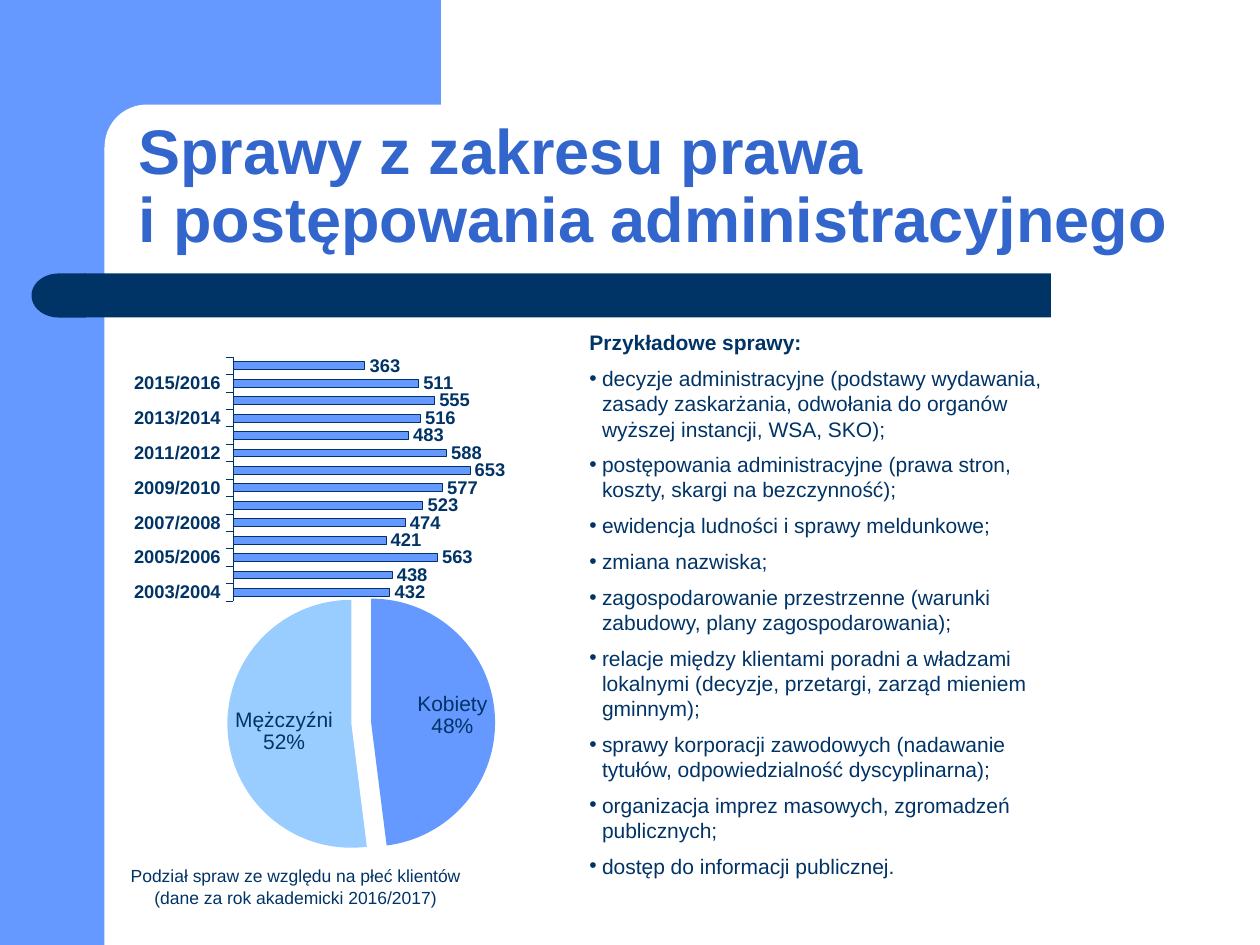
from dataclasses import dataclass

from lxml.etree import SubElement
from pptx import Presentation
from pptx.chart.data import CategoryChartData
from pptx.dml.color import RGBColor
from pptx.enum.chart import XL_CHART_TYPE, XL_LABEL_POSITION, XL_TICK_MARK
from pptx.enum.shapes import MSO_SHAPE
from pptx.enum.text import MSO_ANCHOR, MSO_AUTO_SIZE, PP_ALIGN
from pptx.oxml import parse_xml
from pptx.oxml.ns import nsdecls, qn
from pptx.util import Inches, Pt


@dataclass(frozen=True)
class Theme:
    font: str = "Arial"
    white: RGBColor = RGBColor.from_string("FFFFFF")
    blue: RGBColor = RGBColor.from_string("6699FF")
    light: RGBColor = RGBColor.from_string("99CCFF")
    navy: RGBColor = RGBColor.from_string("003366")
    heading: RGBColor = RGBColor.from_string("3366CC")
    title_size: Pt = Pt(36)
    body_size: Pt = Pt(12)
    bar_size: Pt = Pt(10.5)
    caption_size: Pt = Pt(10)


theme = Theme()


def write_text(para, text, size=theme.body_size, color=theme.navy, bold=False,
               align=PP_ALIGN.LEFT, before=0, line=None, bullet=False):
    para.text = text
    para.alignment = align
    para.space_before = Pt(before)
    para.line_spacing = line
    for span in para.runs:
        span.font.name = theme.font
        span.font.size = size
        span.font.bold = bold
        span.font.color.rgb = color
    if bullet:
        properties = para._p.get_or_add_pPr()
        properties.set("marL", str(Inches(0.1)))
        properties.set("indent", str(-Inches(0.1)))
        SubElement(properties, qn("a:buFont")).set("typeface", theme.font)
        SubElement(properties, qn("a:buChar")).set("char", "•")


def place_plot(chart, **fractions):
    plot_area = chart._chartSpace.chart.plotArea
    for old_layout in plot_area.findall(qn("c:layout")):
        plot_area.remove(old_layout)
    values = "".join(f'<c:{key} val="{value}"/>' for key, value in fractions.items())
    plot_area.insert(0, parse_xml(
        f'<c:layout {nsdecls("c")}><c:manualLayout><c:layoutTarget val="inner"/>'
        f'<c:xMode val="edge"/><c:yMode val="edge"/>{values}</c:manualLayout></c:layout>'))


deck = Presentation()
deck.slide_width = Inches(10)
deck.slide_height = Inches(7.5)
page = deck.slides.add_slide(deck.slide_layouts[5])

decorations = [
    (MSO_SHAPE.RECTANGLE, 0, 0, 0.83, 7.5, theme.blue, 0),
    (MSO_SHAPE.RECTANGLE, 0.75, 0, 2.75, 1.17, theme.blue, 0),
    (MSO_SHAPE.ROUNDED_RECTANGLE, 0.83, 0.83, 5.58, 0.67, theme.white, 0),
    (MSO_SHAPE.RECTANGLE, 0.67, 2.17, 7.67, 0.35, theme.navy, 0),
    (MSO_SHAPE.FLOWCHART_DELAY, 0.25, 2.17, 0.43, 0.35, theme.navy, 180),
]
for kind, left, top, width, height, color, rotation in decorations:
    shape = page.shapes.add_shape(kind, Inches(left), Inches(top), Inches(width), Inches(height))
    shape.shadow.inherit = False
    shape.fill.solid()
    shape.fill.fore_color.rgb = color
    shape.line.fill.background()
    shape.rotation = rotation
    if kind == MSO_SHAPE.ROUNDED_RECTANGLE:
        shape.adjustments[0] = 0.5

title = page.shapes.title
page.shapes._spTree.append(title._element)
title.left, title.top, title.width, title.height = map(Inches, (1, 0.83, 8.75, 1.25))
title.text_frame.vertical_anchor = MSO_ANCHOR.BOTTOM
title.text_frame.auto_size = MSO_AUTO_SIZE.NONE
title.text_frame.word_wrap = True
write_text(title.text_frame.paragraphs[0],
           "Sprawy z zakresu prawa \ni postępowania administracyjnego",
           size=theme.title_size, color=theme.heading, bold=True, line=0.9)

cases = [
    "decyzje administracyjne (podstawy wydawania, zasady zaskarżania, odwołania do organów wyższej instancji, WSA, SKO);",
    "postępowania administracyjne (prawa stron, koszty, skargi na bezczynność);",
    "ewidencja ludności i sprawy meldunkowe;",
    "zmiana nazwiska;",
    "zagospodarowanie przestrzenne (warunki zabudowy, plany zagospodarowania);",
    "relacje między klientami poradni a władzami lokalnymi (decyzje, przetargi, zarząd mieniem gminnym);",
    "sprawy korporacji zawodowych (nadawanie tytułów, odpowiedzialność dyscyplinarna);",
    "organizacja imprez masowych, zgromadzeń publicznych;",
    "dostęp do informacji publicznej.",
]
cases_box = page.shapes.add_textbox(Inches(4.58), Inches(2.57), Inches(4.04), Inches(4.64))
cases_box.text_frame.word_wrap = True
cases_box.text_frame.auto_size = MSO_AUTO_SIZE.SHAPE_TO_FIT_TEXT
write_text(cases_box.text_frame.paragraphs[0], "Przykładowe sprawy:", bold=True, before=6)
for case in cases:
    write_text(cases_box.text_frame.add_paragraph(), case, before=6, bullet=True)

counts = [432, 438, 563, 421, 474, 523, 577, 653, 588, 483, 516, 555, 511, 363]
year_data = CategoryChartData()
year_data.categories = [f"{year}/{year + 1}" for year in range(2003, 2017)]
year_data.add_series("Sprawy", counts)
year_chart = page.shapes.add_chart(XL_CHART_TYPE.BAR_CLUSTERED, Inches(0.88), Inches(2.65),
                                   Inches(3.47), Inches(2.28), year_data).chart
place_plot(year_chart, x=0.28, y=0.08, w=0.58, h=0.85)
year_chart.value_axis.visible = False
year_chart.value_axis.has_major_gridlines = False
year_chart.value_axis.minimum_scale = 0
year_chart.value_axis.maximum_scale = 700
year_axis = year_chart.category_axis
year_axis.major_tick_mark = XL_TICK_MARK.OUTSIDE
year_axis.format.line.color.rgb = theme.navy
year_axis.format.line.width = Pt(0.15)
year_axis._element.find(qn("c:noMultiLvlLbl")).addprevious(
    parse_xml(f'<c:tickLblSkip {nsdecls("c")} val="1"/>'))
bar_plot = year_chart.plots[0]
bar_plot.gap_width = 120
bar_plot.vary_by_categories = False
bars = bar_plot.series[0]
bars.format.fill.solid()
bars.format.fill.fore_color.rgb = theme.blue
bars.format.line.color.rgb = theme.navy
bars.format.line.width = Pt(0.25)
bar_labels = bars.data_labels
bar_labels.show_value = True
bar_labels.position = XL_LABEL_POSITION.OUTSIDE_END

caption_box = page.shapes.add_textbox(Inches(0.83), Inches(6.82), Inches(3.03), Inches(0.43))
caption_box.text_frame.word_wrap = True
caption_box.text_frame.auto_size = MSO_AUTO_SIZE.SHAPE_TO_FIT_TEXT
write_text(caption_box.text_frame.paragraphs[0],
           "Podział spraw ze względu na płeć klientów (dane za rok akademicki 2016/2017)",
           size=theme.caption_size, align=PP_ALIGN.CENTER, before=5)

gender_data = CategoryChartData()
gender_data.categories = ["Kobiety", "Mężczyźni"]
gender_data.add_series("Płeć", [48, 52])
gender_chart = page.shapes.add_chart(XL_CHART_TYPE.PIE, Inches(0.27), Inches(4.54),
                                     Inches(4.33), Inches(2.4), gender_data).chart
place_plot(gender_chart, x=0.37, y=0.09, w=0.46, h=0.82)
slices = gender_chart.plots[0].series[0]
for index, color in enumerate((theme.blue, theme.light)):
    fill = slices.points[index].format.fill
    fill.solid()
    fill.fore_color.rgb = color
for point in slices._element.findall(qn("c:dPt")):
    point.find(qn("c:spPr")).addprevious(parse_xml(f'<c:explosion {nsdecls("c")} val="8"/>'))
gender_labels = slices.data_labels
gender_labels.show_value = False
gender_labels.show_category_name = True
gender_labels.show_percentage = True
gender_labels.number_format = "0%"
gender_labels.number_format_is_linked = False
gender_labels.position = XL_LABEL_POSITION.INSIDE_END
gender_labels._element.find(qn("c:showBubbleSize")).addnext(
    parse_xml(f'<c:separator {nsdecls("c")}>\n</c:separator>'))

for chart in (year_chart, gender_chart):
    chart.has_legend = False
    chart.has_title = False
for font, size, bold in (
    (year_chart.font, theme.bar_size, True),
    (year_axis.tick_labels.font, theme.bar_size, True),
    (bar_labels.font, theme.bar_size, True),
    (gender_chart.font, theme.body_size, False),
    (gender_labels.font, theme.body_size, False),
):
    font.name = theme.font
    font.size = size
    font.bold = bold
    font.color.rgb = theme.navy

deck.save("out.pptx")
